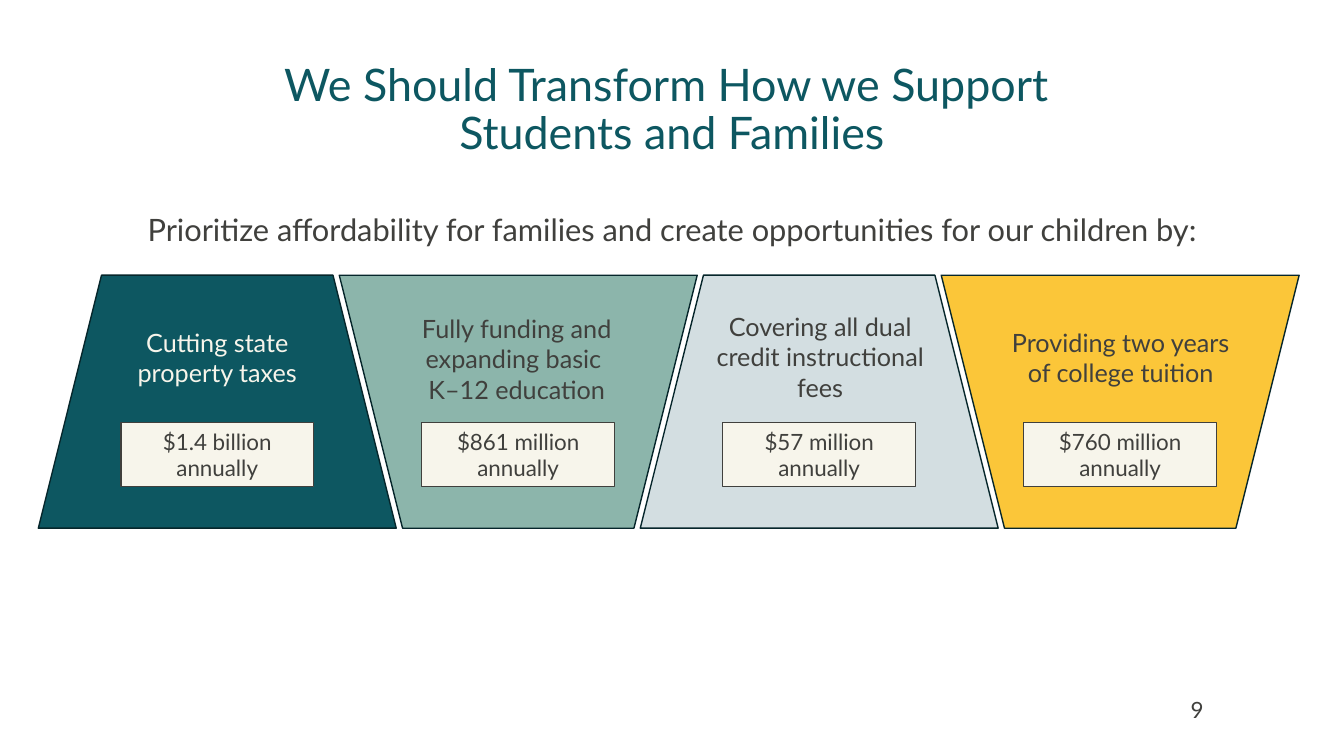
from pptx import Presentation
from pptx.dml.color import RGBColor
from pptx.enum import shapes, text
from pptx.util import Inches, Pt

TEAL, CREAM, CHARCOAL, OUTLINE = "0D5761", "F7F5EB", "40403D", "06262B"
CENTER, LEFT = text.PP_ALIGN.CENTER, text.PP_ALIGN.LEFT
MIDDLE, TOP = text.MSO_ANCHOR.MIDDLE, text.MSO_ANCHOR.TOP

deck = Presentation()
deck.slide_width, deck.slide_height = Inches(13.33), Inches(7.5)
slide = deck.slides.add_slide(deck.slide_layouts[6])


def rgb(color):
    return RGBColor.from_string(color)


def write(shape, words, size, color=CHARCOAL, align=CENTER, anchor=MIDDLE, spacing=None):
    frame = shape.text_frame
    frame.text = words
    frame.word_wrap = True
    frame.vertical_anchor = anchor
    for paragraph in frame.paragraphs:
        paragraph.alignment = align
        paragraph.line_spacing = spacing
        for run in paragraph.runs:
            run.font.name = "Lato"
            run.font.size = Pt(size)
            run.font.color.rgb = rgb(color)


# Page number, title and lead-in
page_number = slide.shapes.add_textbox(Inches(11.71), Inches(6.84), Inches(0.7), Inches(0.4))
write(page_number, "9", 16, align=LEFT)

title = slide.shapes.add_textbox(Inches(0.49), Inches(0.73), Inches(12.35), Inches(0.74))
write(title, "We Should Transform How we Support \nStudents and Families", 32, TEAL, spacing=0.9)

lead_in = slide.shapes.add_textbox(Inches(0.49), Inches(1.93), Inches(12.35), Inches(0.74))
write(lead_in, "Prioritize affordability for families and create opportunities for our children by:",
      22, spacing=0.9)

# Four priorities: fill, text colour, label, label box (left, top, width, height), cost
priorities = [
    (TEAL, CREAM, "Cutting state property taxes", (1.2, 3.2, 1.91, 0.71), "$1.4 billion"),
    ("8CB5AB", CHARCOAL, "Fully funding and expanding basic \nK–12 education",
     (3.92, 3.06, 2.41, 1.01), "$861 million"),
    ("D3DEE1", CHARCOAL, "Covering all dual credit instructional fees",
     (6.95, 3.04, 2.37, 1.01), "$57 million"),
    ("FBC639", CHARCOAL, "Providing two years of college tuition",
     (9.82, 3.2, 2.59, 0.71), "$760 million"),
]
PITCH = 2.985

for i, (fill, label_color, label_words, label_box, amount) in enumerate(priorities):
    # Every second trapezoid is turned over so that the slanted sides meet
    panel = slide.shapes.add_shape(shapes.MSO_SHAPE.TRAPEZOID, Inches(0.38 + i * PITCH),
                                   Inches(2.73), Inches(3.55), Inches(2.51))
    panel.rotation = 180 * (i % 2)

    label = slide.shapes.add_textbox(*map(Inches, label_box))
    write(label, label_words, 18, label_color, anchor=TOP)

    cost = slide.shapes.add_shape(shapes.MSO_SHAPE.RECTANGLE, Inches(1.2 + i * PITCH),
                                  Inches(4.19), Inches(1.91), Inches(0.64))
    write(cost, f"{amount}\nannually", 16)

    for shape, color, line, weight in ((panel, fill, OUTLINE, 1), (cost, CREAM, CHARCOAL, 0.75)):
        shape.shadow.inherit = False
        shape.fill.solid()
        shape.fill.fore_color.rgb = rgb(color)
        shape.line.color.rgb = rgb(line)
        shape.line.width = Pt(weight)

deck.save("out.pptx")
